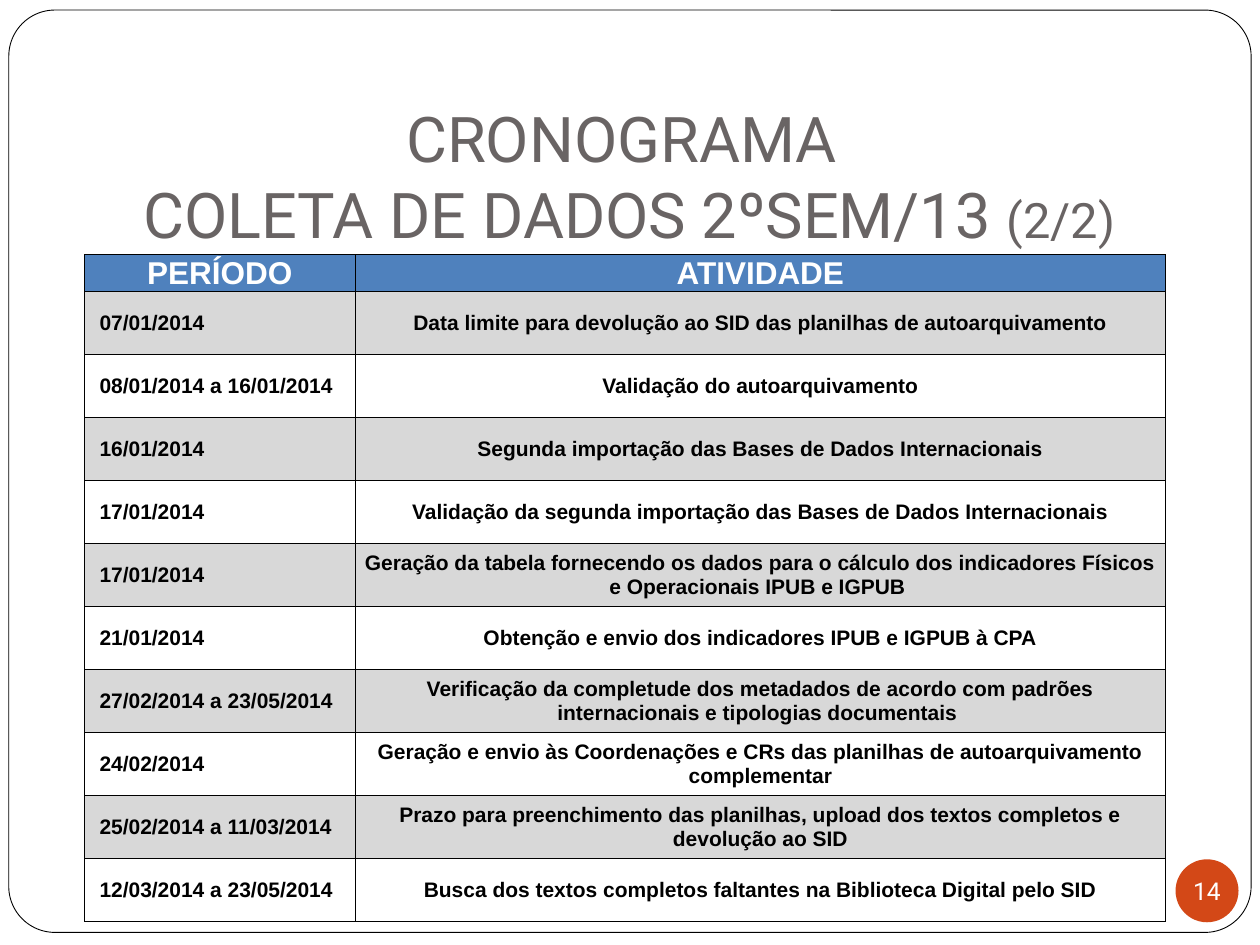
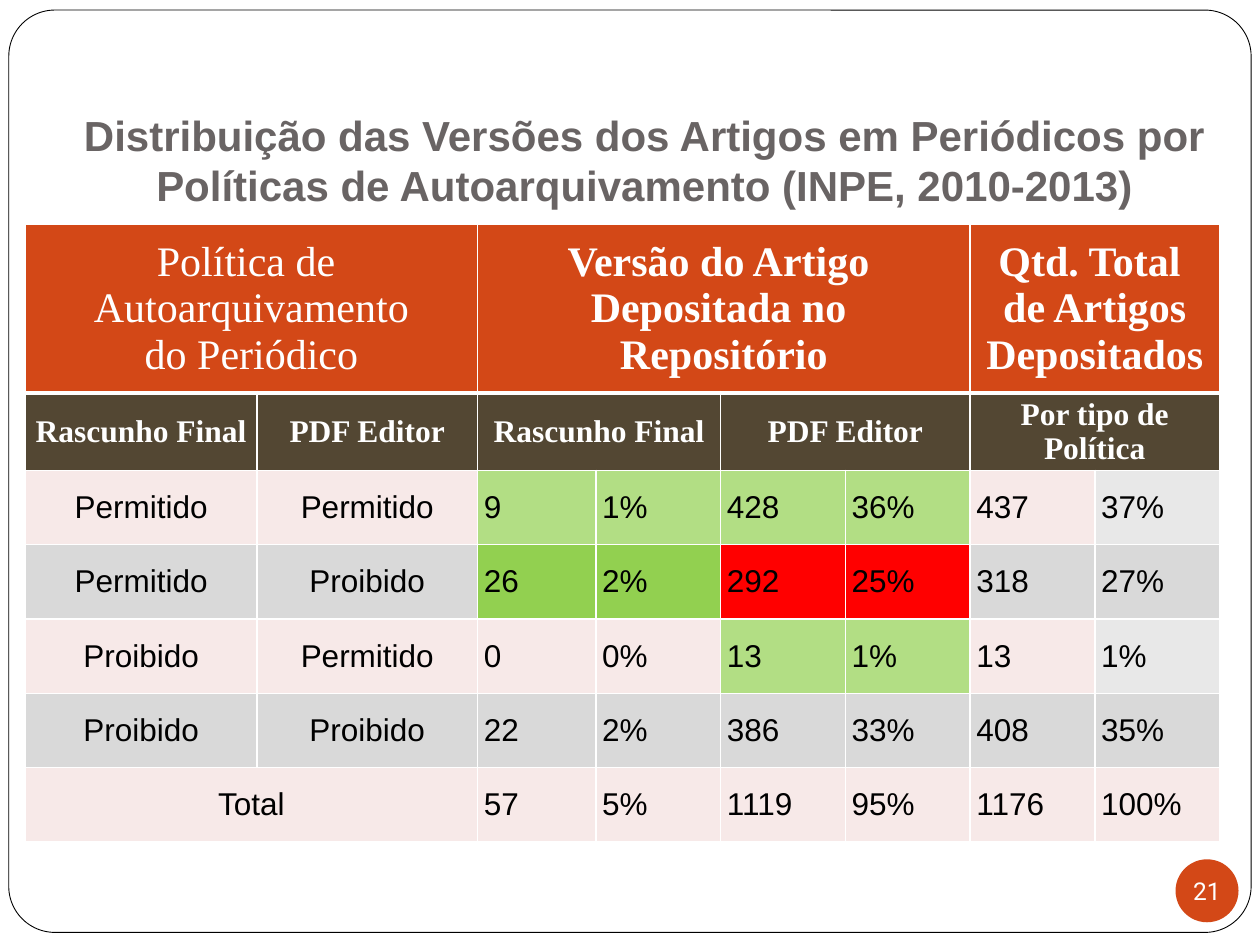
"""Build two table slides: a data collection schedule and article versions by policy."""
from dataclasses import dataclass
from typing import NamedTuple, Optional

from lxml.etree import SubElement as Sub
from pptx import Presentation
from pptx.dml.color import RGBColor as Rgb
from pptx.enum.shapes import MSO_SHAPE as Kind
from pptx.enum.text import MSO_ANCHOR as Anchor, MSO_AUTO_SIZE as Auto, PP_ALIGN as Align
from pptx.oxml import parse_xml
from pptx.oxml.ns import nsdecls, qn
from pptx.util import Inches, Pt


class Font(NamedTuple):
    face: str
    size: float
    color: str
    bold: bool = False


class Paint(NamedTuple):
    color: str
    alpha: int = 100


@dataclass(frozen=True)
class Theme:
    black: str = "000000"
    white: str = "FFFFFF"
    accent: Paint = Paint("D34817")
    blue: Paint = Paint("4F81BD")
    brown: Paint = Paint("534733")
    band: Paint = Paint("D8D8D8")
    pale: Paint = Paint("F7E9E8")
    gray: Paint = Paint("D9D9D9")
    faint: Paint = Paint("D9D9D9", 60)
    green: Paint = Paint("92D050")
    light: Paint = Paint("92D050", 70)
    red: Paint = Paint("FF0000")
    title: Font = Font("Roboto", 36, "696464")
    small: Font = Font("Roboto", 27.9, "696464")
    strong: Font = Font("Arial", 24, "696464", True)
    badge: Font = Font("Roboto", 14, "FFFFFF")
    head: Font = Font("Arial", 18, "FFFFFF", True)
    task: Font = Font("Arial", 12, "000000", True)
    plain: Font = Font("Times New Roman", 24, "FFFFFF")
    group: Font = Font("Times New Roman", 24, "FFFFFF", True)
    label: Font = Font("Times New Roman", 18, "FFFFFF", True)
    data: Font = Font("Arial", 18, "000000")


class Run(NamedTuple):
    text: str
    font: Font


class Edge(NamedTuple):
    color: str
    width: float
    base: float


class Style(NamedTuple):
    font: Font
    fill: Optional[Paint]
    edge: Edge
    pad: tuple[float, ...]
    align: Align = Align.CENTER


class Box(NamedTuple):
    left: float
    top: float
    width: float
    height: float

    def emu(self) -> list[int]:
        return [Inches(side) for side in self]


T = Theme()
LINE = Edge(T.black, 0.5, 0.5)
WHITE = Edge(T.white, 1, 1)
THICK = Edge(T.white, 1, 3)
TIGHT = (0.01, 0.01, 0.01, 0)
DATE = (0.12, 0.01, 0.01, 0)
ROOMY = (0.05, 0.03, 0.05, 0.03)
FLUSH = (0, 0, 0, 0)

TASKS = (
    ("07/01/2014", "Data limite para devolução ao SID das planilhas de autoarquivamento"),
    ("08/01/2014 a 16/01/2014", "Validação do autoarquivamento"),
    ("16/01/2014", "Segunda importação das Bases de Dados Internacionais"),
    ("17/01/2014", "Validação da segunda importação das Bases de Dados Internacionais"),
    ("17/01/2014", "Geração da tabela fornecendo os dados para o cálculo dos "
     "indicadores Físicos e Operacionais IPUB e IGPUB "),
    ("21/01/2014", "Obtenção e envio dos indicadores IPUB e IGPUB à CPA"),
    ("27/02/2014 a 23/05/2014", "Verificação da completude dos metadados de acordo com "
     "padrões internacionais e tipologias documentais "),
    ("24/02/2014", "Geração e envio às Coordenações e CRs das planilhas de "
     "autoarquivamento complementar"),
    ("25/02/2014 a 11/03/2014", "Prazo para preenchimento das planilhas, upload dos textos "
     "completos e devolução ao SID"),
    ("12/03/2014 a 23/05/2014", "Busca dos textos completos faltantes na Biblioteca "
     "Digital pelo SID"),
)

GROUPS = ("Política de \nAutoarquivamento\ndo Periódico", None,
          "Versão do Artigo \nDepositada no \nRepositório", None, None, None,
          "Qtd. Total \nde Artigos Depositados", None)
LABELS = ("Rascunho Final", "PDF Editor", "Rascunho Final", None,
          "PDF Editor", None, "Por tipo de Política", None)
COUNTS = (
    ("Permitido", "Permitido", "9", "1%", "428", "36%", "437", "37%"),
    ("Permitido", "Proibido", "26", "2%", "292", "25%", "318", "27%"),
    ("Proibido", "Permitido", "0", "0%", "13", "1%", "13", "1%"),
    ("Proibido", "Proibido", "22", "2%", "386", "33%", "408", "35%"),
    ("Total", None, "57", "5%", "1119", "95%", "1176", "100%"),
)
KEYS = {"p": T.pale, "g": T.gray, "f": T.faint, "v": T.green, "l": T.light, "r": T.red}
FILLS = ("ppllllpf", "ggvvrrgg", "ppppllpf", "gggggggg", "pppppppp")


def write(para, runs: list[Run], align: Align) -> None:
    para.alignment = align
    for text, font in runs:
        for num, line in enumerate(text.split("\n")):
            if num:
                para.add_line_break()
            run = para.add_run()
            run.text = line
            run.font.name = font.face
            run.font.size = Pt(font.size)
            run.font.bold = font.bold
            run.font.color.rgb = Rgb.from_string(font.color)


def pad(item, sides: tuple[float, ...]) -> None:
    (item.margin_left, item.margin_top,
     item.margin_right, item.margin_bottom) = map(Inches, sides)


def paint(fill, tone: Optional[Paint]) -> None:
    if tone is None:
        fill.background()
        return
    fill.solid()
    fill.fore_color.rgb = Rgb.from_string(tone.color)


def trim(cell, edge: Edge) -> None:
    props = cell._tc.get_or_add_tcPr()
    for spot, side in enumerate("LRTB"):
        width = Pt(edge.base if side == "B" else edge.width)
        props.insert(spot, parse_xml(
            f'<a:ln{side} {nsdecls("a")} w="{width}"><a:solidFill>'
            f'<a:srgbClr val="{edge.color}"/></a:solidFill></a:ln{side}>'))


def dress(cell, text: Optional[str], style: Style) -> None:
    paint(cell.fill, style.fill)
    if style.fill and style.fill.alpha < 100:
        tone = cell._tc.tcPr.find(f".//{qn('a:srgbClr')}")
        Sub(tone, qn("a:alpha"), val=str(style.fill.alpha * 1000))
    trim(cell, style.edge)
    pad(cell, style.pad)
    cell.vertical_anchor = Anchor.MIDDLE
    if text is not None:
        write(cell.text_frame.paragraphs[0], [Run(text, style.font)], style.align)


def grid(slide, box: Box, cols: list[float], rows: list[float], texts, styles) -> None:
    table = slide.shapes.add_table(len(rows), len(cols), *box.emu()).table
    table.first_row = table.horz_banding = False
    for col, width in zip(table.columns, cols):
        col.width = Inches(width)
    for row, high in zip(table.rows, rows):
        row.height = Inches(high)
    for y, (line, looks) in enumerate(zip(texts, styles)):
        for x, (text, look) in enumerate(zip(line, looks)):
            dress(table.cell(y, x), text, look)
        starts = [x for x, text in enumerate(line) if text is not None]
        for start, stop in zip(starts, starts[1:] + [len(line)]):
            if stop - start > 1:
                table.cell(y, start).merge(table.cell(y, stop - 1))


def frame(slide, layout) -> None:
    shape = slide.shapes.add_shape(Kind.ROUNDED_RECTANGLE, *Box(0.07, 0.08, 9.86, 7.32).emu())
    shape.adjustments[0] = 0.05
    shape.shadow.inherit = False
    paint(shape.fill, Paint(T.white))
    shape.line.color.rgb = Rgb.from_string(T.black)
    shape.line.width = Pt(0.5)
    layout.shapes.element.insert(2, shape.element)


def start(deck, box: Box, runs: list[Run], page: int):
    slide = deck.slides.add_slide(deck.slide_layouts[5])
    title = slide.shapes.title
    title.left, title.top, title.width, title.height = box.emu()
    text = title.text_frame
    text.auto_size = Auto.NONE
    text.word_wrap = True
    text.vertical_anchor = Anchor.BOTTOM
    pad(text, (0.1, 0.05, 0.1, 0.1))
    write(text.paragraphs[0], runs, Align.CENTER)

    badge = slide.shapes.add_shape(Kind.OVAL, *Box(9.33, 6.82, 0.5, 0.5).emu())
    badge.shadow.inherit = False
    paint(badge.fill, T.accent)
    badge.line.fill.background()
    text = badge.text_frame
    text.word_wrap = False
    text.vertical_anchor = Anchor.MIDDLE
    pad(text, FLUSH)
    write(text.paragraphs[0], [Run(str(page), T.badge)], Align.CENTER)
    return slide


def plan(deck):
    runs = [Run("CRONOGRAMA \nCOLETA DE DADOS 2ºSEM/13 ", T.title), Run("(2/2)", T.small)]
    slide = start(deck, Box(0.51, 0.84, 8.97, 1.25), runs, 14)
    styles = [[Style(T.head, T.blue, LINE, TIGHT)] * 2]
    for num in range(len(TASKS)):
        fill = None if num % 2 else T.band
        styles.append([Style(T.task, fill, LINE, DATE, Align.LEFT),
                       Style(T.task, fill, LINE, TIGHT)])
    grid(slide, Box(0.67, 2.02, 8.58, 5.33), [2.15, 6.43], [0.26] + [0.5] * len(TASKS),
         [("PERÍODO", "ATIVIDADE"), *TASKS], styles)
    return slide


def share(deck) -> None:
    runs = [Run("Distribuição das Versões dos Artigos em Periódicos por Políticas "
                "de Autoarquivamento (INPE, 2010-2013)", T.strong)]
    slide = start(deck, Box(0.51, 0.52, 9.21, 1.25), runs, 21)
    styles = [
        [Style(T.plain, T.accent, THICK, ROOMY)] * 2
        + [Style(T.group, T.accent, THICK, FLUSH)] * 6,
        [Style(T.label, T.brown, WHITE, ROOMY)] * 8,
    ]
    for keys in FILLS:
        styles.append([Style(T.data, KEYS[key], WHITE, ROOMY,
                             Align.CENTER if x < 2 else Align.LEFT)
                       for x, key in enumerate(keys)])
    grid(slide, Box(0.2, 1.78, 9.49, 4.95), [1.84, 1.75, 0.94] + [0.99] * 5,
         [1.34, 0.55] + [0.59] * len(COUNTS), [GROUPS, LABELS, *COUNTS], styles)


def main() -> None:
    deck = Presentation()
    deck.slide_width, deck.slide_height = Inches(10), Inches(7.5)
    first = plan(deck)
    frame(first, deck.slide_layouts[5])
    share(deck)
    deck.save("out.pptx")


if __name__ == "__main__":
    main()
